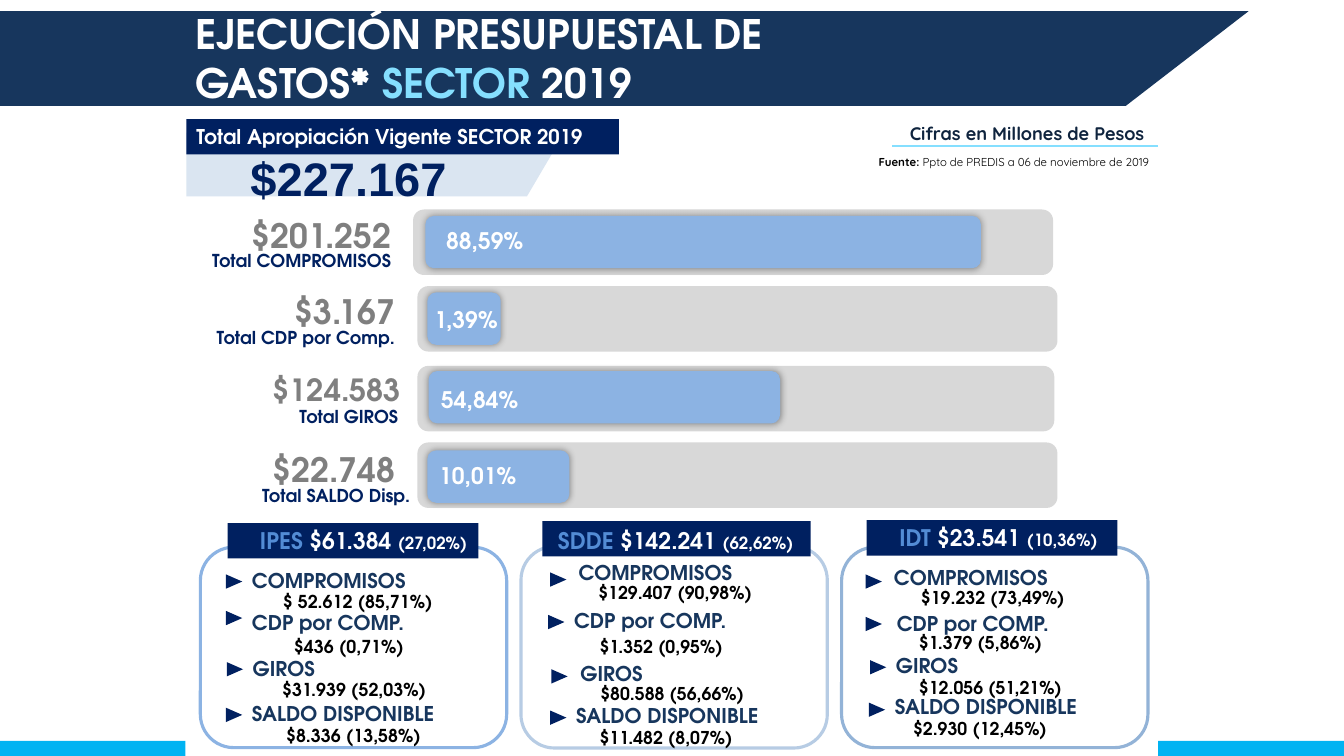
from dataclasses import dataclass
from typing import NamedTuple, Optional

from lxml.etree import SubElement
from pptx import Presentation
from pptx.dml.color import RGBColor
from pptx.enum.shapes import MSO_CONNECTOR, MSO_SHAPE as Shape
from pptx.enum.text import MSO_ANCHOR as Anchor, PP_ALIGN as Align
from pptx.oxml.ns import qn
from pptx.util import Cm, Pt

HEADING, SANS, ARIAL = "TeX Gyre Adventor", "Quicksand", "Arial"
NAVY, BLUE, SKY, WHITE = "002060", "17365D", "85DFFF", "FFFFFF"
BAR, TRACK, GRAY, BLACK = "8CB3E3", "D8D8D8", "7F7F7F", "000000"


class Run(NamedTuple):
    text: str
    color: Optional[str] = None
    size: Optional[float] = None
    bold: Optional[bool] = None


class Box(NamedTuple):
    x: float
    y: float
    w: float
    h: float


class Point(NamedTuple):
    x: float
    y: float


@dataclass
class Bar:
    caption: str
    amount: str
    percent: str
    track: Box
    filled: Box
    percent_box: Box
    amount_end: Point
    caption_end: Point
    amount_size: float = 24


@dataclass
class Item:
    value: str
    label_at: Point
    value_at: Point
    marker_at: Point


@dataclass
class Panel:
    name: str
    total: str
    share: str
    frame: Box
    line: str
    band: Box
    title: Box
    value_size: float
    items: list[Item]


ITEM_LABELS = ["COMPROMISOS", "CDP por COMP.", "GIROS", "SALDO DISPONIBLE"]

BARS = [
    Bar("Total COMPROMISOS", "$201.252", "88,59%", Box(10.41, 5.28, 16.13, 1.65),
        Box(10.72, 5.44, 14, 1.32), Box(10.13, 5.59, 4.17, 0.97),
        Point(10.11, 5.28), Point(10.11, 6.17)),
    Bar("Total CDP por Comp.", "$3.167", "1,39%", Box(10.52, 7.21, 16.13, 1.65),
        Box(10.77, 7.37, 1.85, 1.32), Box(10.49, 7.59, 2.51, 0.97),
        Point(10.21, 7.21), Point(10.21, 8.1)),
    Bar("Total GIROS", "$124.583", "54,84%", Box(10.52, 9.22, 16.05, 1.65),
        Box(10.8, 9.35, 8.86, 1.32), Box(10.72, 9.6, 2.74, 0.97),
        Point(10.36, 9.22), Point(10.29, 10.11), 21.8),
    Bar("Total SALDO Disp.", "$22.748", "10,01%", Box(10.52, 11.15, 16.13, 1.65),
        Box(10.77, 11.35, 3.58, 1.32), Box(10.62, 11.51, 2.84, 0.97),
        Point(10.21, 11.18), Point(10.59, 12.09)),
]

PANELS = [
    Panel("IPES", "$61.384", "(27,02%)", Box(5.05, 13.79, 7.72, 5.05), BAR,
          Box(5.74, 13.18, 6.32, 0.89), Box(5.23, 13.16, 7.87, 0.97), 12.7, [
              Item("$ 52.612 (85,71%)", Point(6.1, 14.2), Point(6.88, 14.76), Point(5.72, 14.45)),
              Item("$436 (0,71%)", Point(6.1, 15.24), Point(7.16, 15.9), Point(5.72, 15.37)),
              Item("$31.939 (52,03%)", Point(6.12, 16.41), Point(6.86, 16.97), Point(5.74, 16.66)),
              Item("$8.336 (13,58%)", Point(6.1, 17.55), Point(6.96, 18.14), Point(5.72, 17.81))]),
    Panel("SDDE", "$142.241", "(62,62%)", Box(13.13, 13.77, 7.72, 5.08), "B7CCE4",
          Box(13.67, 13.13, 6.76, 0.89), Box(13.46, 13.16, 7.14, 0.97), 12.6, [
              Item("$129.407 (90,98%)", Point(14.33, 14), Point(14.83, 14.55), Point(13.89, 14.4)),
              Item("$1.352 (0,95%)", Point(14.22, 15.21), Point(14.86, 15.9), Point(13.84, 15.47)),
              Item("$80.588 (56,66%)", Point(14.38, 16.54), Point(14.88, 17.07), Point(13.92, 16.84)),
              Item("$11.482 (8,07%)", Point(14.27, 17.6), Point(14.86, 18.19), Point(13.89, 17.88))]),
    Panel("IDT", "$23.541", "(10,36%)", Box(21.21, 13.79, 7.72, 5.05), "93B3D7",
          Box(21.84, 13.11, 6.32, 0.89), Box(21.95, 13.08, 6.43, 0.97), 12.6, [
              Item("$19.232 (73,49%)", Point(22.28, 14.12), Point(22.96, 14.66), Point(21.84, 14.45)),
              Item("$1.379 (5,86%)", Point(22.35, 15.27), Point(22.91, 15.8), Point(21.84, 15.52)),
              Item("$12.056 (51,21%)", Point(22.33, 16.33), Point(22.91, 16.94), Point(21.95, 16.61)),
              Item("$2.930 (12,45%)", Point(22.3, 17.37), Point(22.76, 17.96), Point(21.92, 17.68))]),
]


def rgb(color: str) -> RGBColor:
    return RGBColor.from_string(color)


def cm(box: Box) -> list[Cm]:
    return [Cm(v) for v in box]


def paint(sp, fill: Optional[str], line: Optional[str] = None) -> None:
    sp.shadow.inherit = False
    if fill:
        sp.fill.solid()
        sp.fill.fore_color.rgb = rgb(fill)
    else:
        sp.fill.background()
    if line:
        sp.line.color.rgb = rgb(line)
        sp.line.width = Pt(2.25)
    else:
        sp.line.fill.background()


def add_shape(s, kind: Shape, box: Box, fill: Optional[str], line: Optional[str] = None):
    sp = s.shapes.add_shape(kind, *cm(box))
    paint(sp, fill, line)
    return sp


def add_outline(s, points: list[Point], fill: str) -> None:
    start, *rest = [(Cm(p.x), Cm(p.y)) for p in points]
    builder = s.shapes.build_freeform(*start, scale=1.0)
    builder.add_line_segments(rest, close=True)
    paint(builder.convert_to_shape(), fill)


def add_glow(sp) -> None:
    """Give the shape a soft, centred black shadow."""
    effects = sp._element.spPr.find(qn("a:effectLst"))
    shadow = SubElement(effects, qn("a:outerShdw"), blurRad=str(Pt(5)), dist="0",
                        dir="0", algn="ctr", rotWithShape="0")
    color = SubElement(shadow, qn("a:srgbClr"), val=BLACK)
    SubElement(color, qn("a:alpha"), val="40000")


def write(p, runs: list[Run], size: float, color: str, font: str = HEADING,
          align: Align = Align.LEFT) -> None:
    p.alignment = align
    p.font.name, p.font.size, p.font.bold = font, Pt(size), True
    p.font.color.rgb = rgb(color)
    for run in runs:
        r = p.add_run()
        r.text = run.text
        if run.color:
            r.font.color.rgb = rgb(run.color)
        if run.size:
            r.font.size = Pt(run.size)
        if run.bold is not None:
            r.font.bold = run.bold


def add_text(s, box: Box, runs: list[Run], size: float, color: str, font: str = HEADING,
             align: Align = Align.LEFT):
    tf = s.shapes.add_textbox(*cm(box)).text_frame
    tf.word_wrap = True
    write(tf.paragraphs[0], runs, size, color, font, align)
    return tf


def draw_header(s) -> None:
    add_shape(s, Shape.RECTANGLE, Box(0, 18.67, 33.87, 0.38), "00B3F2")
    add_outline(s, [Point(0, 0.28), Point(31.47, 0.28), Point(28.37, 2.67), Point(0, 2.67)], BLUE)
    add_shape(s, Shape.RECTANGLE, Box(4.67, 18.29, 24.51, 0.76), WHITE)
    tf = add_text(s, Box(4.67, 0.1, 20.62, 2.74), [Run("EJECUCIÓN PRESUPUESTAL DE")], 29, WHITE)
    write(tf.add_paragraph(), [Run("GASTOS* "), Run("SECTOR", SKY), Run(" 2019")], 29, WHITE)

    add_outline(s, [Point(4.7, 3.35), Point(14.22, 3.35), Point(13.28, 4.95), Point(4.7, 4.95)],
                "DAE5F1")
    add_text(s, Box(4.29, 3.63, 8.99, 1.7), [Run("$227.167")], 33.6, NAVY, ARIAL, Align.CENTER)
    tf = add_shape(s, Shape.RECTANGLE, Box(4.7, 3, 10.9, 0.89), NAVY).text_frame
    tf.vertical_anchor = Anchor.MIDDLE
    write(tf.paragraphs[0], [Run("Total Apropiación Vigente SECTOR 2019")], 14.5, WHITE)


def draw_source(s) -> None:
    table = s.shapes.add_table(1, 1, *cm(Box(21.29, 2.82, 7.57, 1.09))).table
    table.first_row = table.horz_banding = False
    cell = table.cell(0, 0)
    cell.fill.background()
    cell.vertical_anchor = Anchor.MIDDLE
    cell.margin_left = cell.margin_right = cell.margin_top = Cm(0.03)
    cell.margin_bottom = Cm(0)
    write(cell.text_frame.paragraphs[0], [Run("Cifras en Millones de Pesos")], 13, "0F243E",
          SANS, Align.RIGHT)
    rule = s.shapes.add_connector(MSO_CONNECTOR.STRAIGHT, Cm(29.18), Cm(3.68), Cm(22.48), Cm(3.68))
    rule.line.color.rgb = rgb(SKY)
    rule.line.width = Pt(1)
    SubElement(rule._element.spPr, qn("a:effectLst"))
    add_text(s, Box(21.29, 3.78, 7.92, 0.94),
             [Run("Fuente: "), Run("Ppto de PREDIS a 06 de noviembre de 2019", bold=False)],
             8.2, BLACK, SANS, Align.RIGHT)


def draw_bar(s, bar: Bar) -> None:
    add_shape(s, Shape.FLOWCHART_ALTERNATE_PROCESS, bar.track, TRACK)
    add_glow(add_shape(s, Shape.FLOWCHART_ALTERNATE_PROCESS, bar.filled, BAR))
    add_text(s, bar.percent_box, [Run(bar.percent)], 16.3, WHITE, align=Align.CENTER)
    add_text(s, Box(bar.caption_end.x - 6.68, bar.caption_end.y, 6.68, 0.79),
             [Run(bar.caption)], 12.7, NAVY, align=Align.RIGHT)
    add_text(s, Box(bar.amount_end.x - 5.56, bar.amount_end.y, 5.56, 1.27),
             [Run(bar.amount)], bar.amount_size, GRAY, align=Align.RIGHT)


def draw_panel(s, panel: Panel) -> None:
    add_shape(s, Shape.FLOWCHART_ALTERNATE_PROCESS, panel.frame, None, panel.line)
    add_shape(s, Shape.RECTANGLE, panel.band, NAVY)
    add_text(s, panel.title, [Run(f"{panel.name} ", "538CD5"), Run(f"{panel.total} "),
                              Run(panel.share, size=12)], 16.3, WHITE, align=Align.CENTER)
    for label, item in zip(ITEM_LABELS, panel.items):
        add_shape(s, Shape.ISOSCELES_TRIANGLE, Box(*item.marker_at, 0.36, 0.41), NAVY).rotation = 90
        add_text(s, Box(*item.value_at, 5.1, 0.79), [Run(item.value)], panel.value_size, BLACK)
        add_text(s, Box(*item.label_at, 6.12, 0.89), [Run(label)], 14.5, BLUE)


def main() -> None:
    prs = Presentation()
    prs.slide_width, prs.slide_height = Cm(33.87), Cm(19.05)
    s = prs.slides.add_slide(prs.slide_layouts[6])
    draw_header(s)
    draw_source(s)
    for bar in BARS:
        draw_bar(s, bar)
    for panel in PANELS:
        draw_panel(s, panel)
    prs.save("out.pptx")


if __name__ == "__main__":
    main()
